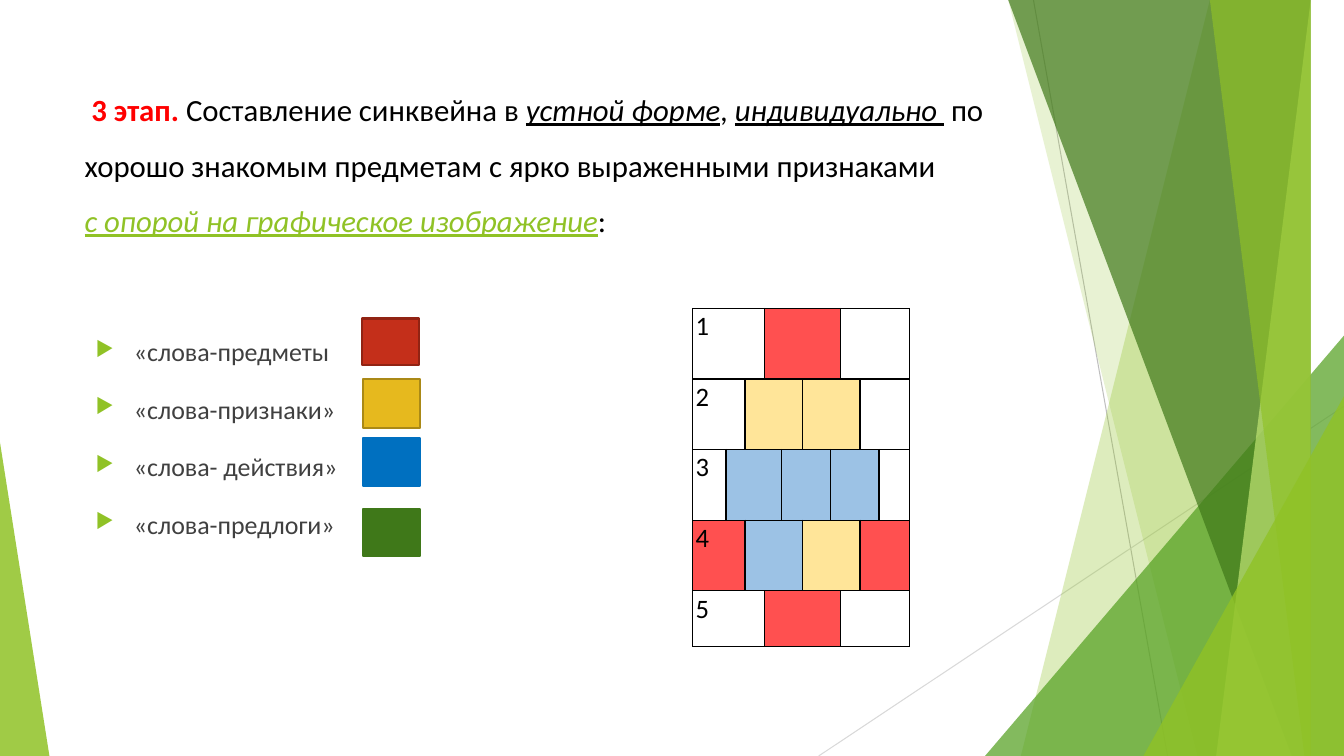
from dataclasses import dataclass

from lxml.etree import SubElement
from pptx import Presentation
from pptx.dml.color import RGBColor
from pptx.enum.shapes import MSO_CONNECTOR, MSO_SHAPE
from pptx.oxml.ns import qn
from pptx.util import Inches, Pt

FONT = "Calibri"
COLORS = {
    "black": "000000",
    "red": "FF0000",
    "lime": "90C226",
    "leaf": "54A021",
    "forest": "3F7819",
    "pale": "C0E474",
    "gray": "404040",
    "ray_dark": "BFBFBF",
    "ray_light": "D9D9D9",
    "object": "FF5050",
    "feature": "FFE599",
    "action": "9CC2E5",
    "brick": "C42F1A",
    "brick_edge": "912313",
    "gold": "E6B91E",
    "gold_edge": "AA8916",
    "blue": "0070C0",
}


@dataclass
class Ray:
    start: tuple[float, float]
    end: tuple[float, float]
    color: str


@dataclass
class Facet:
    points: list[tuple[float, float]]
    color: str
    opacity: int


@dataclass
class Wedge:
    box: tuple[float, float, float, float]
    apex: int
    color: str
    opacity: int


@dataclass
class Phrase:
    text: str
    color: str = "black"
    bold: bool = False
    accent: bool = False


@dataclass
class Swatch:
    box: tuple[float, float, float, float]
    color: str
    edge: str


@dataclass
class Block:
    span: int
    color: str = ""


RAYS = [
    Ray((10.25, 0), (11.58, 7.5), "ray_dark"),
    Ray((13.33, 4.03), (8.12, 7.5), "ray_light"),
]
DECOR = [
    Facet([(12.28, 0), (13.33, 0), (13.33, 7.5), (10.04, 7.5)], "lime", 30),
    Facet([(10.5, 0), (13.33, 0), (13.33, 7.5), (11.83, 7.5)], "lime", 20),
    Wedge((9.77, 3.33, 3.56, 4.17), 1, "leaf", 72),
    Facet([(10.21, 0), (13.33, 0), (13.33, 7.5), (12.91, 7.5)], "forest", 70),
    Facet([(13.03, 0), (13.33, 0), (13.33, 7.5), (11.92, 7.5)], "pale", 70),
    Facet([(11.96, 0), (13.33, 0), (13.33, 7.5), (13.18, 7.5)], "lime", 65),
    Wedge((11.34, 3.93, 1.99, 3.57), 1, "lime", 80),
    Wedge((0, 4.39, 0.49, 3.11), 0, "lime", 85),
]
STAGE_LINES = [
    [
        Phrase(" 3 этап. ", "red", bold=True),
        Phrase("Составление синквейна в "),
        Phrase("устной форме", accent=True),
        Phrase(", "),
        Phrase("индивидуально ", accent=True),
        Phrase(" по хорошо знакомым предметам с ярко выраженными признаками "),
    ],
    [Phrase("с опорой на графическое изображение", "lime", accent=True), Phrase(":")],
]
WORD_KINDS = ["«слова-предметы", "«слова-признаки»", "«слова- действия»", "«слова-предлоги»"]
SWATCHES = [
    Swatch((3.59, 3.16, 0.57, 0.46), "brick", "brick_edge"),
    Swatch((3.6, 3.76, 0.57, 0.49), "gold", "gold_edge"),
    Swatch((3.6, 4.35, 0.57, 0.47), "blue", "blue"),
    Swatch((3.6, 5.05, 0.57, 0.47), "forest", "forest"),
]
COLUMN_WIDTHS = [0.33, 0.19, 0.19, 0.17, 0.21, 0.28, 0.1, 0.19, 0.19, 0.3]
ROW_HEIGHTS = [0.7] * 4 + [0.55]
SINGLE = [Block(3), Block(4, "object"), Block(3)]
CINQUAIN = [
    SINGLE,
    [Block(2), Block(3, "feature"), Block(3, "feature"), Block(2)],
    [Block(1), Block(3, "action"), Block(2, "action"), Block(3, "action"), Block(1)],
    [Block(2, "object"), Block(3, "action"), Block(3, "feature"), Block(2, "object")],
    SINGLE,
]


def rgb(name: str) -> RGBColor:
    return RGBColor.from_string(COLORS[name])


def paint(shape, color: str, opacity: int = 100) -> None:
    shape.shadow.inherit = False
    shape.fill.solid()
    shape.fill.fore_color.rgb = rgb(color)
    if opacity < 100:
        tone = shape.fill._xPr.find(qn("a:solidFill"))[0]
        SubElement(tone, qn("a:alpha"), val=str(opacity * 1000))


def draw_ray(slide, ray: Ray) -> None:
    ends = [Inches(value) for value in ray.start + ray.end]
    line = slide.shapes.add_connector(MSO_CONNECTOR.STRAIGHT, *ends)
    line.line.color.rgb = rgb(ray.color)
    line.line.width = Pt(0.75)
    SubElement(line._element.spPr, qn("a:effectLst"))


def draw_decor(slide, piece: Facet | Wedge) -> None:
    if isinstance(piece, Facet):
        first, *rest = piece.points
        builder = slide.shapes.build_freeform(*first, scale=Inches(1))
        builder.add_line_segments(rest, close=True)
        shape = builder.convert_to_shape()
    else:
        shape = slide.shapes.add_shape(MSO_SHAPE.ISOSCELES_TRIANGLE, *map(Inches, piece.box))
        shape.adjustments[0] = piece.apex
    paint(shape, piece.color, piece.opacity)
    shape.line.fill.background()


def draw_swatch(slide, swatch: Swatch) -> None:
    shape = slide.shapes.add_shape(MSO_SHAPE.RECTANGLE, *map(Inches, swatch.box))
    paint(shape, swatch.color)
    shape.line.color.rgb = rgb(swatch.edge)
    shape.line.width = Pt(1.5)


def add_phrase(paragraph, phrase: Phrase, size: float) -> None:
    run = paragraph.add_run()
    run.text = phrase.text
    font = run.font
    font.name, font.size = FONT, Pt(size)
    font.color.rgb = rgb(phrase.color)
    font.bold = phrase.bold
    font.italic = font.underline = phrase.accent


def add_frame(slide, left: float, top: float, width: float, height: float):
    frame = slide.shapes.add_textbox(*map(Inches, (left, top, width, height))).text_frame
    frame.word_wrap = True
    return frame


def draw_stage(slide) -> None:
    paragraph = add_frame(slide, 0.74, 0.67, 9.4, 1.78).paragraphs[0]
    paragraph.line_spacing = 1.5
    for index, phrases in enumerate(STAGE_LINES):
        if index:
            paragraph.add_line_break()
        for phrase in phrases:
            add_phrase(paragraph, phrase, 22)


def draw_word_kinds(slide) -> None:
    frame = add_frame(slide, 0.85, 3.16, 4.5, 4.01)
    for index, kind in enumerate(WORD_KINDS):
        paragraph = frame.add_paragraph() if index else frame.paragraphs[0]
        paragraph.line_spacing = 1.4
        paragraph.space_before = Pt(10)
        props = paragraph._p.get_or_add_pPr()
        props.set("marL", str(Inches(0.38)))
        props.set("indent", str(-Inches(0.38)))
        SubElement(SubElement(props, qn("a:buClr")), qn("a:srgbClr"), val=COLORS["lime"])
        SubElement(props, qn("a:buSzPct"), val="80000")
        SubElement(props, qn("a:buChar"), char="▶")
        add_phrase(paragraph, Phrase(kind, "gray"), 18.5)


def style_cell(cell, color: str) -> None:
    cell.margin_left = cell.margin_right = Inches(0.03)
    cell.margin_top = cell.margin_bottom = 0
    props = cell._tc.get_or_add_tcPr()
    for side in ("lnL", "lnR", "lnT", "lnB"):
        border = SubElement(props, qn(f"a:{side}"), w=str(Pt(1)))
        SubElement(SubElement(border, qn("a:solidFill")), qn("a:srgbClr"), val=COLORS["black"])
    if color:
        cell.fill.solid()
        cell.fill.fore_color.rgb = rgb(color)
    else:
        cell.fill.background()


def draw_cinquain(slide) -> None:
    box = map(Inches, (6.87, 3.06, sum(COLUMN_WIDTHS), sum(ROW_HEIGHTS)))
    table = slide.shapes.add_table(len(ROW_HEIGHTS), len(COLUMN_WIDTHS), *box).table
    table.first_row = table.horz_banding = False
    for column, width in zip(table.columns, COLUMN_WIDTHS):
        column.width = Inches(width)
    for index, (height, blocks) in enumerate(zip(ROW_HEIGHTS, CINQUAIN)):
        table.rows[index].height = Inches(height)
        start = 0
        for block in blocks:
            cell = table.cell(index, start)
            if block.span > 1:
                cell.merge(table.cell(index, start + block.span - 1))
            style_cell(cell, block.color)
            start += block.span
        number = table.cell(index, 0).text_frame.paragraphs[0]
        number.line_spacing = 1.07
        add_phrase(number, Phrase(str(index + 1)), 19)


def main() -> None:
    deck = Presentation()
    deck.slide_width, deck.slide_height = Inches(13.33), Inches(7.5)
    slide = deck.slides.add_slide(deck.slide_layouts[6])
    for ray in RAYS:
        draw_ray(slide, ray)
    for piece in DECOR:
        draw_decor(slide, piece)
    draw_stage(slide)
    draw_word_kinds(slide)
    draw_cinquain(slide)
    for swatch in SWATCHES:
        draw_swatch(slide, swatch)
    deck.save("out.pptx")


if __name__ == "__main__":
    main()
